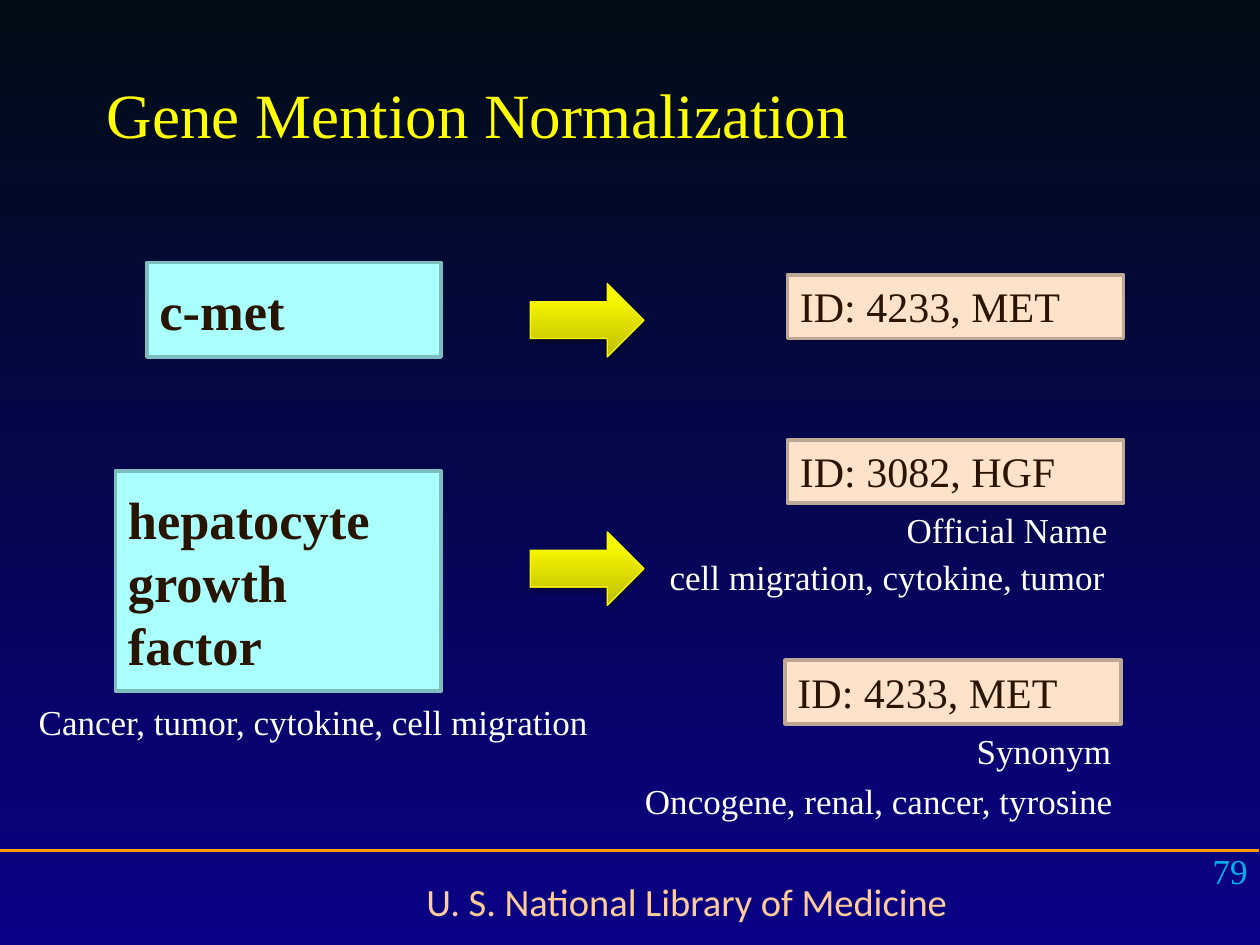
from lxml import etree
from pptx import Presentation
from pptx.dml.color import RGBColor
from pptx.enum.shapes import MSO_CONNECTOR as CONN, MSO_SHAPE as SHAPE
from pptx.enum.text import MSO_ANCHOR as ANCHOR, PP_ALIGN as ALIGN
from pptx.oxml import parse_xml
from pptx.oxml.ns import nsdecls, qn
from pptx.util import Pt

SHADOW = f"""<a:effectLst {nsdecls("a")}>
  <a:outerShdw blurRad="{Pt(3.1)}" dist="{Pt(1.8)}" dir="5400000" rotWithShape="0">
    <a:srgbClr val="000000"><a:alpha val="35000"/></a:srgbClr>
  </a:outerShdw>
</a:effectLst>"""


def rgb(value):
    return RGBColor.from_string(value)


def fill_gradient(fill, angle, *stops):
    """Apply a two-stop gradient; angle runs counter-clockwise."""
    fill.gradient()
    fill.gradient_angle = angle
    for stop, (position, color) in zip(fill.gradient_stops, stops):
        stop.position = position
        stop.color.rgb = rgb(color)


class Deck:
    FONT = "Times New Roman"
    INK = "291400"
    WHITE = "FFFFFF"
    MENTION = ("AAFFFF", "7EBDBD")
    GENE = ("FFE2CA", "BDA795")
    BAR = "FF9900"
    ARROW_LINE = "F9F900"

    def __init__(self, width, height):
        self.prs = Presentation()
        self.prs.slide_width, self.prs.slide_height = Pt(width), Pt(height)
        self.s = self.prs.slides.add_slide(self.prs.slide_layouts[6])

    def background(self, top, bottom):
        fill_gradient(self.s.background.fill, 270, (0, top), (1, bottom))

    def set_text(self, sp, text, size, color, align=ALIGN.LEFT, anchor=ANCHOR.TOP,
                 font=FONT, bold=False):
        tf = sp.text_frame
        tf.word_wrap = True
        tf.vertical_anchor = anchor
        p = tf.paragraphs[0]
        p.alignment = align
        r = p.add_run()
        r.text = text
        r.font.name, r.font.size, r.font.bold = font, Pt(size), bold
        r.font.color.rgb = rgb(color)

    def text(self, box, text, size=20, color=WHITE, **style):
        sp = self.s.shapes.add_textbox(*map(Pt, box))
        self.set_text(sp, text, size, color, **style)

    def shape(self, kind, box, line, width):
        sp = self.s.shapes.add_shape(kind, *map(Pt, box))
        sp.line.color.rgb = rgb(line)
        sp.line.width = Pt(width)
        return sp

    def label(self, box, text, colors, size, **style):
        fill, line = colors
        sp = self.shape(SHAPE.RECTANGLE, box, line, 2)
        sp.shadow.inherit = False
        sp.fill.solid()
        sp.fill.fore_color.rgb = rgb(fill)
        self.set_text(sp, text, size, self.INK, **style)

    def mention(self, box, text):
        self.label(box, text, self.MENTION, 30, bold=True, anchor=ANCHOR.MIDDLE)

    def gene(self, left, top, text):
        self.label((left, top, 192, 36.3), text, self.GENE, 24)

    def arrow(self, top):
        sp = self.shape(SHAPE.RIGHT_ARROW, (303, top, 65, 42), self.ARROW_LINE, 0.75)
        fill_gradient(sp.fill, 90, (0, "BEBE00"), (0.8, "F7F700"))
        sp._element.spPr.append(parse_xml(SHADOW))

    def rule(self, y):
        line = self.s.shapes.add_connector(CONN.STRAIGHT, Pt(0), Pt(y), Pt(719.5), Pt(y))
        line.line.color.rgb = rgb(self.BAR)
        line.line.width = Pt(1.5)
        etree.SubElement(line._element.spPr, qn("a:effectLst"))


def main():
    deck = Deck(720, 540)
    deck.background("000D14", "0A0086")
    deck.rule(486)
    deck.text((167, 498, 451, 34), "U. S. National Library of Medicine", 22, "FFCC99",
              align=ALIGN.CENTER, font="Calibri")
    deck.text((54, 36, 612, 54), "Gene Mention Normalization", 36, "FFFF00",
              anchor=ANCHOR.BOTTOM)
    deck.text((552, 482, 168, 37), "79", color="00B0F0", align=ALIGN.RIGHT)

    deck.mention((84, 150, 168, 54), "c-met")
    deck.mention((66, 269, 186, 126), "hepatocyte growth factor")
    for top in (162, 304):
        deck.arrow(top)
    for left, top, text in ((450, 157, "ID: 4233, MET"),
                            (450, 251.3, "ID: 3082, HGF"),
                            (448.6, 377.3, "ID: 4233, MET")):
        deck.gene(left, top, text)

    for left, top, width, text in (
            (448, 287.3, 192, "Official Name"),
            (450, 413.3, 192, "Synonym"),
            (322.5, 314, 316, "cell migration, cytokine, tumor"),
            (277, 442, 366, "Oncogene, renal, cancer, tyrosine")):
        deck.text((left, top, width, 31.5), text, align=ALIGN.RIGHT)
    deck.text((15, 396.7, 353, 31.5), "Cancer, tumor, cytokine, cell migration")

    deck.prs.save("out.pptx")


if __name__ == "__main__":
    main()
